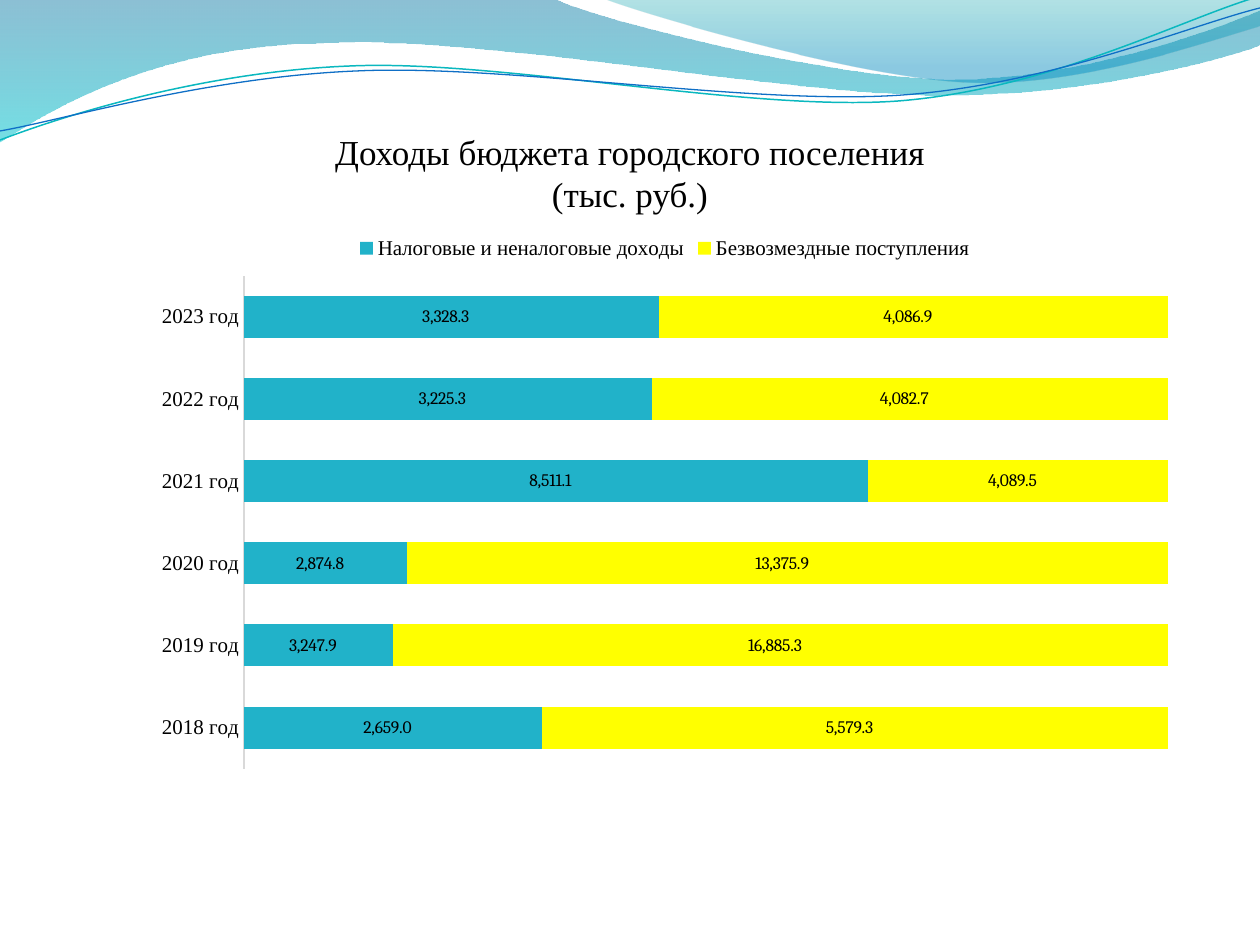
from lxml.etree import SubElement
from pptx import Presentation
from pptx.chart.data import CategoryChartData
from pptx.dml.color import RGBColor
from pptx.enum.chart import XL_CHART_TYPE as ChartType
from pptx.enum.chart import XL_LEGEND_POSITION as LegendPosition
from pptx.enum.chart import XL_TICK_MARK as TickMark
from pptx.enum.text import MSO_ANCHOR as Anchor
from pptx.enum.text import PP_ALIGN as Align
from pptx.oxml.ns import qn
from pptx.util import Pt

SCALE = 914400 / 126  # EMU per px
SERIF = "Times New Roman"
NUMBER_FORMAT = r"#,##0.0\ _₽;\-#,##0.0\ _₽"

# Outlines: a pair is a straight segment, a six-number tuple is a Bézier curve
# Gradient stops: colour, opacity in percent, position
WAVES = [
    {
        "outline": [
            (0, 0), (554, -1),
            (600, 21, 837, 79, 955, 79), (1075, 79, 1207, 33, 1260, 11),
            (1261, 45),
            (1237, 55, 1096, 96, 940, 95), (784, 95, 481, 35, 324, 43),
            (161, 45, 58, 105, -1, 142), (0, 0),
        ],
        "stops": [("0074A1", 45, 0), ("00C6CF", 55, 1)],
    },
    {
        "outline": [
            (604, -1),
            (641, 14, 859, 78, 969, 82), (1079, 87, 1211, 40, 1260, 26),
            (1260, 0), (604, -1),
        ],
        "stops": [("00A1A9", 30, 0), ("008BBF", 45, 0.8)],
    },
]
RIPPLES = [
    {
        "outline": [
            (0, 140), (60, 117, 199, 72, 349, 66),
            (498, 59, 747, 112, 898, 101), (1050, 89, 1182, 19, 1257, -3),
        ],
        "hex_value": "0AB8BF", "width": 0.85,
    },
    {
        "outline": [
            (0, 131), (59, 121, 207, 77, 357, 71),
            (508, 64, 752, 106, 903, 95), (1053, 84, 1188, 26, 1260, 8),
        ],
        "hex_value": "0F6FC6", "width": 0.75,
    },
]

YEARS = [f"{year} год" for year in range(2018, 2024)]
INCOME = [
    ("Налоговые и неналоговые доходы", "21B2C9",
     [2659.0, 3247.9, 2874.8, 8511.1, 3225.3, 3328.3]),
    ("Безвозмездные поступления", "FFFF00",
     [5579.3, 16885.3, 13375.9, 4089.5, 4082.7, 4086.9]),
]


def px(value):
    return round(value * SCALE)


def color(hex_value):
    return RGBColor.from_string(hex_value)


def set_values(target, values):
    for name, value in values.items():
        setattr(target, name, value)


def set_font(font, name, size):
    set_values(font, {"name": name, "size": Pt(size), "bold": False})
    font.color.rgb = color("000000")


def set_line(line, hex_value, width):
    line.color.rgb = color(hex_value)
    line.width = Pt(width)


def add_outline(slide, outline, close):
    anchors = [segment[-2:] for segment in outline]
    builder = slide.shapes.build_freeform(*anchors[0], scale=SCALE)
    builder.add_line_segments(anchors[1:], close=close)
    shape = builder.convert_to_shape()
    shape.shadow.inherit = False

    # Turn the segments that have control points into Bézier curves
    left, top = (min(axis) for axis in zip(*anchors))
    segments = list(shape._element.spPr.iter(qn("a:lnTo")))
    for element, segment in zip(segments, outline[1:]):
        if len(segment) == 6:
            curve = SubElement(element.getparent(), qn("a:cubicBezTo"))
            for x, y in zip(segment[::2], segment[1::2]):
                SubElement(curve, qn("a:pt"), x=str(x - left), y=str(y - top))
            element.getparent().replace(element, curve)
    return shape


def add_wave(slide, outline, stops):
    shape = add_outline(slide, outline, close=True)
    shape.line.fill.background()
    shape.fill.gradient()
    shape.fill.gradient_angle = 270
    for stop, (hex_value, _, position) in zip(shape.fill.gradient_stops, stops):
        stop.color.rgb = color(hex_value)
        stop.position = position
    # Opacity of each gradient stop
    stop_colors = shape._element.spPr.iter(qn("a:srgbClr"))
    for stop_color, (_, opacity, _) in zip(stop_colors, stops):
        SubElement(stop_color, qn("a:alpha"), val=str(opacity * 1000))


def add_ripple(slide, outline, hex_value, width):
    shape = add_outline(slide, outline, close=False)
    shape.fill.background()
    set_line(shape.line, hex_value, width)


def add_title(slide, text):
    box = slide.shapes.add_textbox(px(63), px(148), px(1134), px(67))
    box.fill.solid()
    box.fill.fore_color.rgb = color("FFFFFF")
    set_line(box.line, "FFFFFF", 0.75)
    set_values(box.text_frame, {
        "word_wrap": True, "vertical_anchor": Anchor.BOTTOM,
        "margin_left": 0, "margin_right": 0,
        "margin_top": px(6), "margin_bottom": 0,
    })
    paragraph = box.text_frame.paragraphs[0]
    paragraph.text = text
    paragraph.alignment = Align.CENTER
    for run in paragraph.runs:
        set_font(run.font, SERIF, 20)


def add_income_chart(slide):
    data = CategoryChartData(number_format=NUMBER_FORMAT)
    data.categories = YEARS
    for name, _, values in INCOME:
        data.add_series(name, values)
    chart = slide.shapes.add_chart(
        ChartType.BAR_STACKED_100, px(141), px(223), px(1048), px(557), data
    ).chart
    set_values(chart, {"has_title": False, "has_legend": True})
    set_font(chart.font, "Cambria", 10)

    # Legend
    set_values(chart.legend, {"position": LegendPosition.TOP, "include_in_layout": False})
    set_font(chart.legend.font, SERIF, 12)

    # Axes
    years = chart.category_axis
    set_values(years, {"major_tick_mark": TickMark.NONE, "minor_tick_mark": TickMark.NONE})
    set_font(years.tick_labels.font, SERIF, 12)
    set_line(years.format.line, "D9D9D9", 1)
    set_values(chart.value_axis, {"visible": False, "has_major_gridlines": False})

    # Bars and their values
    plot = chart.plots[0]
    set_values(plot, {"gap_width": 95, "overlap": 100, "vary_by_categories": False})
    for series, (_, hex_value, _) in zip(plot.series, INCOME):
        series.format.fill.solid()
        series.format.fill.fore_color.rgb = color(hex_value)
        set_values(series.data_labels, {
            "show_value": True, "number_format": NUMBER_FORMAT,
            "number_format_is_linked": False,
        })
        set_font(series.data_labels.font, "Cambria", 10)


def main():
    presentation = Presentation()
    set_values(presentation, {"slide_width": px(1260), "slide_height": px(945)})
    slide = presentation.slides.add_slide(presentation.slide_layouts[6])
    for wave in WAVES:
        add_wave(slide, **wave)
    for ripple in RIPPLES:
        add_ripple(slide, **ripple)
    add_title(slide, "Доходы бюджета городского поселения\v(тыс. руб.)")
    add_income_chart(slide)
    presentation.save("out.pptx")


if __name__ == "__main__":
    main()
